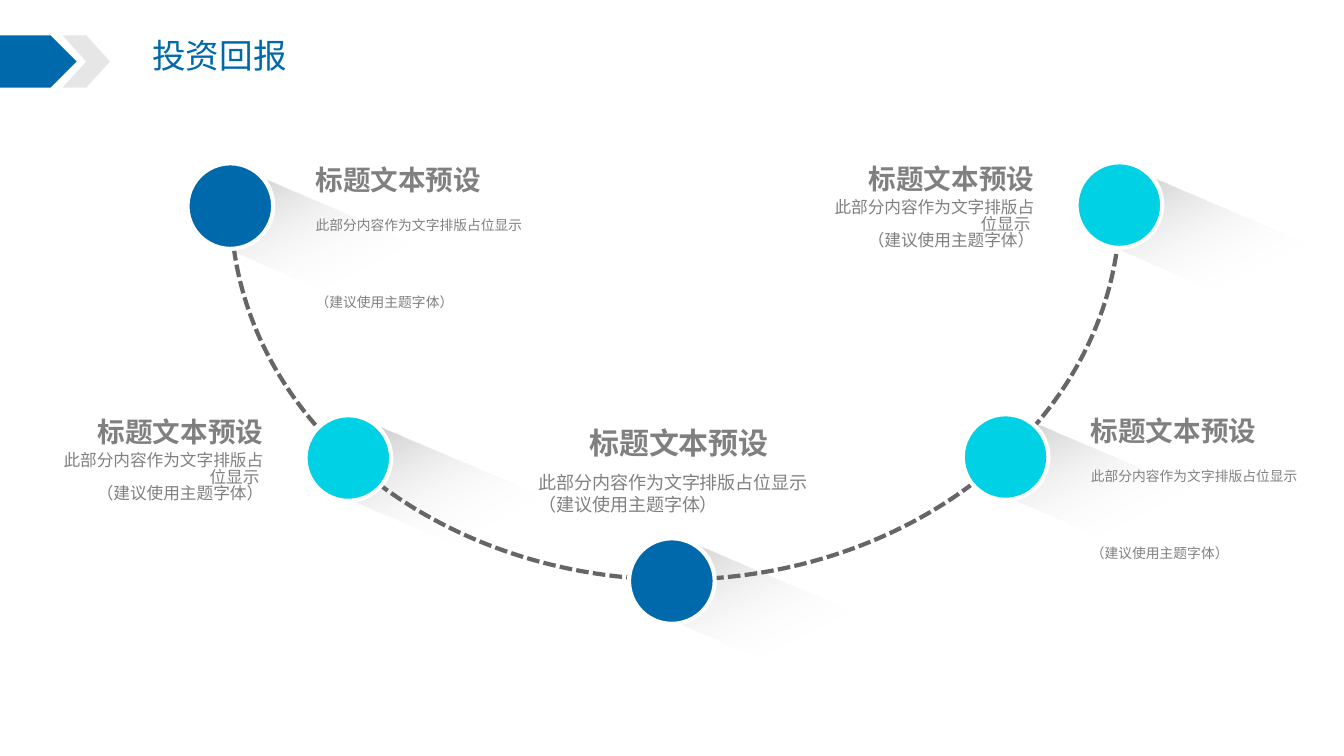
from lxml import etree
from pptx import Presentation
from pptx.dml.color import RGBColor
from pptx.enum.dml import MSO_LINE
from pptx.enum.shapes import MSO_SHAPE
from pptx.enum.text import MSO_ANCHOR, PP_ALIGN
from pptx.oxml import parse_xml
from pptx.oxml.ns import nsdecls, qn
from pptx.util import Inches, Pt

BLUE = RGBColor(0x00, 0x69, 0xAC)
CYAN = RGBColor(0x00, 0xD1, 0xE5)
PALE = RGBColor(0xE7, 0xE6, 0xE6)
GREY = RGBColor(0x80, 0x80, 0x80)
DARK = RGBColor(0x66, 0x66, 0x66)
WHITE = RGBColor(0xFF, 0xFF, 0xFF)

PLATE, CHEVRON = MSO_SHAPE.PENTAGON, MSO_SHAPE.CHEVRON
RECT, ARC, OVAL = MSO_SHAPE.RECTANGLE, MSO_SHAPE.ARC, MSO_SHAPE.OVAL
DASH = MSO_LINE.SQUARE_DOT
TOP, MIDDLE, BOTTOM = MSO_ANCHOR.TOP, MSO_ANCHOR.MIDDLE, MSO_ANCHOR.BOTTOM
LEFT, CENTER, RIGHT = PP_ALIGN.LEFT, PP_ALIGN.CENTER, PP_ALIGN.RIGHT

HEAD = "标题文本预设"
BODY = "此部分内容作为文字排版占位显示 \v（建议使用主题字体）"

# Disc and label sizes, in percent of the slide's width or height
DISC_W, DISC_H = 6.38, 11.33
LABEL_W, HEAD_H, BODY_H = 18.53, 4.27, 8.13
GAP, DROP = 3.15, 1.33

# Disc left and top, shadow left and top, colour, side of the label
STOPS = [
    (13.95, 21.6, 16.05, 29.33, BLUE, LEFT),
    (22.73, 54.93, 25.65, 62.8, CYAN, RIGHT),
    (46.8, 71.2, 48.6, 78, BLUE, CENTER),
    (71.63, 54.8, 73.8, 61.87, CYAN, LEFT),
    (80.1, 21.47, 82.35, 29.33, CYAN, RIGHT),
]
# Start and end of each arc, in the preset's own units
ARCS = [(194.45, 0), (162.28, 193.22), (131.09, 161.63), (107.85, 130.51)]

FADE = f"""<a:gradFill {nsdecls('a')} rotWithShape="1"><a:gsLst>
<a:gs pos="0"><a:srgbClr val="23A9FF"><a:alpha val="54000"/></a:srgbClr></a:gs>
<a:gs pos="0"><a:srgbClr val="BFBFBF"/></a:gs>
<a:gs pos="54000"><a:srgbClr val="FFFFFF"><a:alpha val="0"/></a:srgbClr></a:gs>
</a:gsLst><a:lin ang="2400000" scaled="0"/></a:gradFill>"""


class Deck:
    """Holds the style and the slide; boxes are percents of the slide's size."""

    font = "Noto Sans CJK SC"

    def __init__(self):
        self.prs = Presentation()
        self.prs.slide_width = Inches(13.33)
        self.prs.slide_height = Inches(7.5)
        self.slide = self.prs.slides.add_slide(self.prs.slide_layouts[5])

    def wide(self, share):
        return round(self.prs.slide_width * share / 100)

    def high(self, share):
        return round(self.prs.slide_height * share / 100)

    def place(self, box):
        x, y, w, h = box
        return self.wide(x), self.high(y), self.wide(w), self.high(h)

    def letter(self, frame, text, size, color, align=LEFT, bold=False, pitch=None):
        """Set the text of a frame and format its runs."""
        frame.text = text
        for para in frame.paragraphs:
            para.alignment = align
            para.line_spacing = pitch
            for run in para.runs:
                font = run.font
                font.size, font.bold, font.name = Pt(size), bold, self.font
                font.color.rgb = color
                east = etree.SubElement(run._r.get_or_add_rPr(), qn("a:ea"))
                east.set("typeface", self.font)

    def title(self, text, box):
        shape = self.slide.shapes.title
        shape.left, shape.top, shape.width, shape.height = self.place(box)
        frame = shape.text_frame
        frame.word_wrap = False
        frame.vertical_anchor = TOP
        self.letter(frame, text, 24, BLUE)

    def text(self, text, box, size, anchor=TOP, pad=(0, 0, 0), wrap=True, **look):
        """Add a text box; pad is its left, top and right inset."""
        frame = self.slide.shapes.add_textbox(*self.place(box)).text_frame
        frame.word_wrap = wrap
        frame.vertical_anchor = anchor
        left, top, right = pad
        frame.margin_left, frame.margin_right = self.wide(left), self.wide(right)
        frame.margin_top, frame.margin_bottom = self.high(top), 0
        self.letter(frame, text, size, GREY, **look)

    def shape(self, kind, box, fill=None, line=None, adjust=(), turn=0):
        shape = self.slide.shapes.add_shape(kind, *self.place(box))
        shape.shadow.inherit = False
        shape.rotation = turn
        for i, value in enumerate(adjust):
            shape.adjustments[i] = value
        if fill is None:
            shape.fill.background()
        else:
            shape.fill.solid()
            shape.fill.fore_color.rgb = fill
        if line is None:
            shape.line.fill.background()
        else:
            shape.line.color.rgb = line
            shape.line.width = Pt(3)
        return shape

    def shade(self, x, y):
        """Add a slanted band that fades out."""
        band = self.shape(RECT, (x, y, 20.63, 10.4), turn=23.3)
        props = band.element.spPr
        props.replace(props.find(qn("a:noFill")), parse_xml(FADE))

    def arc(self, ends):
        box = (17.18, -22.27, 66.15, 98.93)
        curve = self.shape(ARC, box, line=DARK, adjust=ends, turn=180)
        curve.line.dash_style = DASH

    def label(self, x, y, side):
        """Add the heading and body that belong to the disc at x, y."""
        if side == CENTER:
            self.text(HEAD, (40.05, 55.33, 20.93, 5.6), 21.4, BOTTOM,
                      wrap=False, align=CENTER, bold=True)
            self.text(BODY, (40.05, 61.07, 20.93, 10.13), 12.9,
                      pad=(0, DROP, 0), pitch=1.0)
            return
        if side == LEFT:
            x += DISC_W
            anchors, pads = (BOTTOM, TOP), ((GAP, 0, 0), (GAP, DROP, 0))
            size, pitch = 9.8, 1.66
        else:
            x -= LABEL_W
            anchors, pads = (MIDDLE, MIDDLE), ((0, 0, GAP), (0, 0, GAP))
            size, pitch = 11.9, 0.83
        self.text(HEAD, (x, y, LABEL_W, HEAD_H), 19.7, anchors[0], pads[0],
                  wrap=False, align=side, bold=True)
        self.text(BODY, (x, y + HEAD_H, LABEL_W, BODY_H), size, anchors[1],
                  pads[1], align=side, pitch=pitch)


def main():
    deck = Deck()
    deck.title("投资回报", (10.58, 4, 11.63, 6.67))
    deck.shape(PLATE, (0, 4.67, 5.7, 6.93), BLUE, adjust=[0.5])
    deck.shape(CHEVRON, (4.65, 4.67, 3.53, 6.93), PALE, adjust=[0.5])
    for _, _, x, y, _, _ in reversed(STOPS):
        deck.shade(x, y)
    for ends in ARCS:
        deck.arc(ends)
    for x, y, _, _, color, _ in STOPS:
        deck.shape(OVAL, (x, y, DISC_W, DISC_H), color, WHITE)
    for x, y, _, _, _, side in STOPS:
        deck.label(x, y, side)
    deck.prs.save("out.pptx")


if __name__ == "__main__":
    main()
